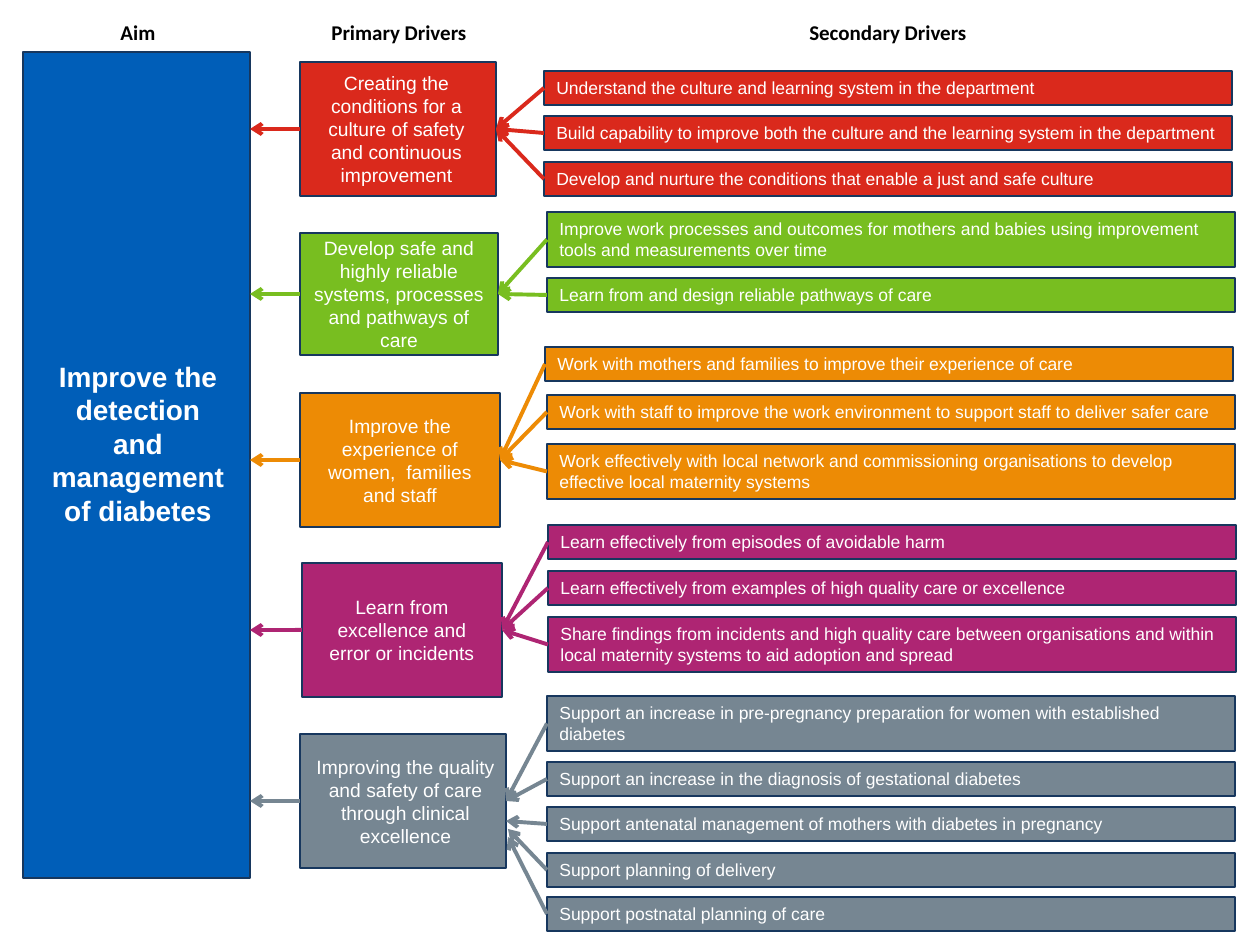
from collections import namedtuple

from pptx import Presentation
from pptx.dml.color import RGBColor
from pptx.enum.shapes import MSO_CONNECTOR as LINK, MSO_SHAPE as SHAPE
from pptx.enum.text import MSO_ANCHOR as ANCHOR, PP_ALIGN as ALIGN
from pptx.oxml.ns import qn
from pptx.util import Emu, Pt
from lxml.etree import SubElement

PX = 914400 / 126
LEFT_SIDE, RIGHT_SIDE = 1, 3
ONE_LINE, TWO_LINES = 34, 55
SECONDARY_WIDTH = 688
AIM_BOX = (23, 52, 227, 826)
AIM_RIGHT = 250
NAVY, BLUE, WHITE, BLACK = "17375E", "005EB8", "FFFFFF", "000000"

Primary = namedtuple("Primary", "text color box insets secondaries", defaults=[None])
Secondary = namedtuple("Secondary", "text left top height tip", defaults=[ONE_LINE, None])

HEADINGS = [
    ("Aim", 25, 226),
    ("Primary Drivers", 302, 194),
    ("Secondary Drivers", 544, SECONDARY_WIDTH),
]

DRIVERS = [
    Primary("Creating the conditions for a culture of safety and continuous improvement",
            "DA291C", (300, 62, 196, 134), (10, 13), [
        Secondary("Understand the culture and learning system in the department", 544, 71),
        Secondary("Build capability to improve both the culture and the learning system "
                  "in the department", 544, 116),
        Secondary("Develop and nurture the conditions that enable a just and safe culture",
                  544, 162),
    ]),
    Primary("Develop safe and highly reliable systems, processes and pathways of care",
            "78BE20", (300, 233, 198, 122), (13, 13), [
        Secondary("Improve work processes and outcomes for mothers and babies using "
                  "improvement tools and measurements over time", 547, 212, TWO_LINES),
        Secondary("Learn from and design reliable pathways of care", 547, 278),
    ]),
    Primary("Improve the experience of women,  families and staff",
            "ED8B05", (300, 393, 200, 134), (13, 13), [
        Secondary("Work with mothers and families to improve their experience of care",
                  545, 347),
        Secondary("Work with staff to improve the work environment to support staff to "
                  "deliver safer care", 547, 395),
        Secondary("Work effectively with local network and commissioning organisations to "
                  "develop effective local maternity systems", 547, 444, TWO_LINES),
    ]),
    Primary("Learn from excellence and error or incidents",
            "AE2573", (302, 563, 200, 134), (13, 13), [
        Secondary("Learn effectively from episodes of avoidable harm", 548, 525),
        Secondary("Learn effectively from examples of high quality care or excellence",
                  548, 571),
        Secondary("Share findings from incidents and high quality care between organisations "
                  "and within local maternity systems to aid adoption and spread",
                  548, 617, TWO_LINES),
    ]),
    Primary("Improving the quality and safety of care through clinical excellence",
            "768692", (300, 734, 206, 134), (10, 5), [
        Secondary("Support an increase in pre-pregnancy preparation for women with "
                  "established diabetes", 547, 696, TWO_LINES),
        Secondary("Support an increase in the diagnosis of gestational diabetes", 547, 762),
        Secondary("Support antenatal management of mothers with diabetes in pregnancy",
                  547, 807, tip=(506, 821)),
        Secondary("Support planning of delivery", 547, 853, tip=(508, 829)),
        Secondary("Support postnatal planning of care", 547, 897, tip=(508, 837)),
    ]),
]


def px(*lengths):
    return [Emu(round(length * PX)) for length in lengths]


def paint(color_format, color):
    color_format.rgb = RGBColor.from_string(color)


def write(frame, text, size, color=WHITE, font="Arial", bold=False, align=ALIGN.CENTER):
    frame.word_wrap = True
    paragraph = frame.paragraphs[0]
    paragraph.alignment = align
    run = paragraph.add_run()
    run.text = text
    run.font.name, run.font.size, run.font.bold = font, Pt(size), bold
    paint(run.font.color, color)


def add_label(slide, box, text, size, **style):
    label = slide.shapes.add_textbox(*px(*box))
    write(label.text_frame, text, size, **style)


def add_box(slide, box, color):
    panel = slide.shapes.add_shape(SHAPE.RECTANGLE, *px(*box))
    panel.shadow.inherit = False
    panel.fill.solid()
    paint(panel.fill.fore_color, color)
    paint(panel.line.color, NAVY)
    panel.line.width = Pt(1)
    return panel


def add_primary(slide, driver):
    panel = add_box(slide, driver.box, driver.color)
    frame = panel.text_frame
    frame.vertical_anchor = ANCHOR.MIDDLE
    frame.margin_left, frame.margin_right = px(*driver.insets)
    write(frame, driver.text, 11)
    return panel


def add_secondary(slide, driver, color):
    panel = add_box(slide, (driver.left, driver.top, SECONDARY_WIDTH, driver.height), color)
    panel.text_frame.vertical_anchor = ANCHOR.TOP
    write(panel.text_frame, driver.text, 10, align=ALIGN.LEFT)
    return panel


def add_arrow(slide, source, tip, color, target=None):
    middle = source.top + source.height // 2
    arrow = slide.shapes.add_connector(LINK.STRAIGHT, source.left, middle, *px(*tip))
    arrow.begin_connect(source, LEFT_SIDE)
    if target is not None:
        arrow.end_connect(target, RIGHT_SIDE)
    paint(arrow.line.color, color)
    arrow.line.width = Pt(2.25)
    properties = arrow._element.spPr
    SubElement(properties.find(qn("a:ln")), qn("a:tailEnd"), type="arrow")
    SubElement(properties, qn("a:effectLst"))


def add_driver(slide, driver):
    primary = add_primary(slide, driver)
    left, top, width, height = driver.box
    middle = top + height // 2
    add_arrow(slide, primary, (AIM_RIGHT, middle), driver.color)
    for secondary in driver.secondaries:
        panel = add_secondary(slide, secondary, driver.color)
        if secondary.tip:
            add_arrow(slide, panel, secondary.tip, driver.color)
        else:
            add_arrow(slide, panel, (left + width, middle), driver.color, primary)


def main():
    deck = Presentation()
    deck.slide_width, deck.slide_height = px(1260, 945)
    slide = deck.slides.add_slide(deck.slide_layouts[6])
    for text, left, width in HEADINGS:
        add_label(slide, (left, 13, width, 38), text, 12,
                  color=BLACK, font="Calibri", bold=True)
    add_box(slide, AIM_BOX, BLUE)
    add_label(slide, (38, 353, 200, 183),
              "Improve the detection and management of diabetes", 16, bold=True)
    for driver in DRIVERS:
        add_driver(slide, driver)
    deck.save("out.pptx")


if __name__ == "__main__":
    main()
